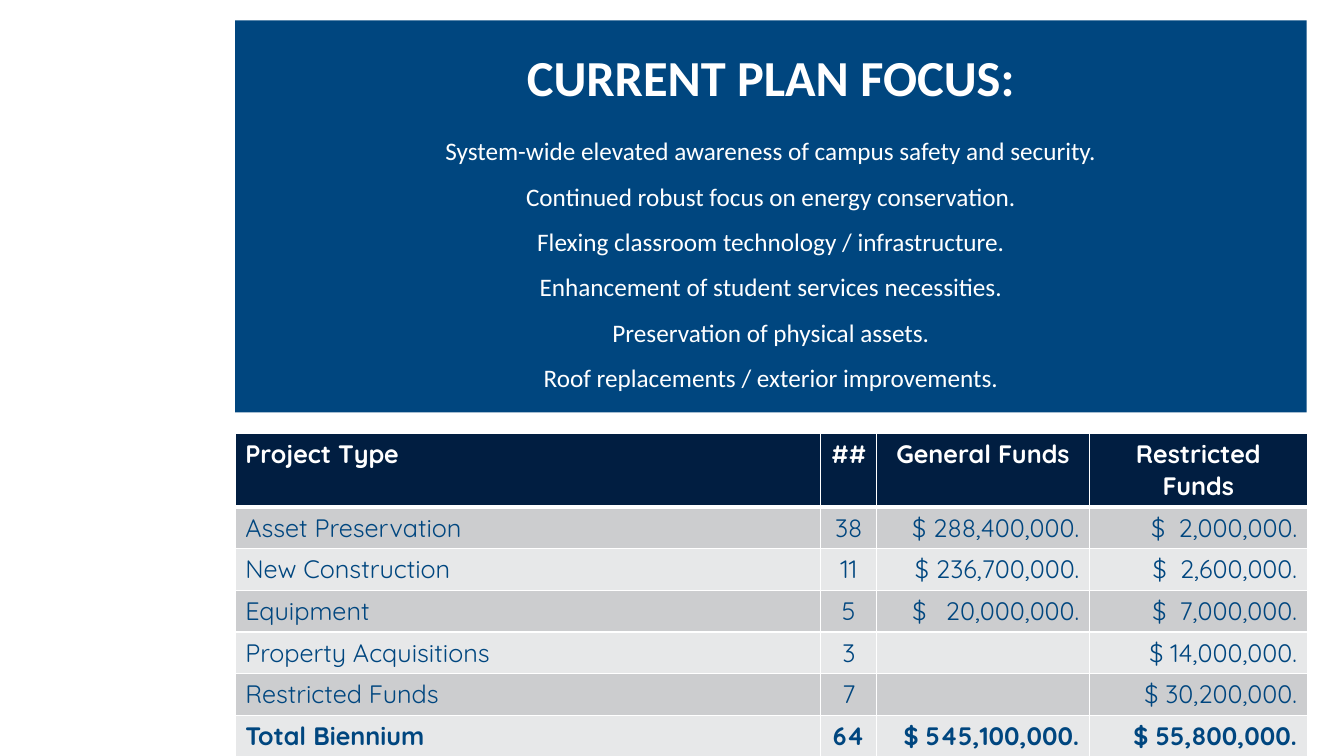
import pptx
import pptx.chart.data
import pptx.dml.color
import pptx.enum.shapes
import pptx.enum.text
import pptx.oxml
import pptx.oxml.ns
import pptx.util

ALIGN = pptx.enum.text.PP_ALIGN
COLORS = {"white": "FFFFFF", "blue": "00467F", "navy": "011E41",
          "dark_band": "CCCDCF", "light_band": "E7E8E9"}

# The slide is a grid of 100 columns by 100 rows
SLIDE_WIDTH = pptx.util.Inches(13.33)
SLIDE_HEIGHT = pptx.util.Inches(7.5)
LEFT, WIDTH = 17.5, 79.72
PANEL_TOP, PANEL_HEIGHT = 2.7, 51.85
TABLE_TOP, HEADER_HEIGHT, ROW_HEIGHT = 57.35, 9.45, 5.51
TABLE_COLUMNS = [43.58, 4.15, 15.83, 16.2]
COLUMN_ALIGNS = [ALIGN.LEFT, ALIGN.CENTER, ALIGN.RIGHT, ALIGN.RIGHT]

HEADING = "CURRENT PLAN FOCUS:"
FOCUS_LINES = [
    "System-wide elevated awareness of campus safety and security.",
    "Continued robust focus on energy conservation.",
    "Flexing classroom technology / infrastructure.",
    "Enhancement of student services necessities.",
    "Preservation of physical assets.",
    "Roof replacements / exterior improvements.",
]
FUND_ROWS = [
    ["Project Type", "##", "General Funds", "Restricted Funds"],
    ["Asset Preservation", "38", "$ 288,400,000.", "$ 2,000,000."],
    ["New Construction", "11", "$ 236,700,000.", "$ 2,600,000."],
    ["Equipment", "5", "$ 20,000,000.", "$ 7,000,000."],
    ["Property Acquisitions", "3", "", "$ 14,000,000."],
    ["Restricted Funds", "7", "", "$ 30,200,000."],
    ["Total Biennium", "64", "$ 545,100,000.", "$ 55,800,000."],
]
# Letter spacing, in points, that widens the gap after the dollar sign
DOLLAR_SPACING = {"$ 2,000,000.": 2.2, "$ 2,600,000.": 2.2,
                  "$ 7,000,000.": 2.2, "$ 20,000,000.": 4.4}


def across(columns):
    return round(SLIDE_WIDTH * columns / 100)


def down(rows):
    return round(SLIDE_HEIGHT * rows / 100)


def color(name):
    return pptx.dml.color.RGBColor.from_string(COLORS[name])


def style(para, name, size, color_name, bold, align):
    para.alignment = align
    para.font.name = name
    para.font.size = pptx.util.Pt(size)
    para.font.bold = bold
    para.font.color.rgb = color(color_name)


def add_panel(page):
    panel = page.shapes.add_shape(
        pptx.enum.shapes.MSO_SHAPE.RECTANGLE, across(LEFT), down(PANEL_TOP),
        across(WIDTH), down(PANEL_HEIGHT))
    panel.shadow.inherit = False
    panel.fill.solid()
    panel.fill.fore_color.rgb = color("blue")
    panel.line.fill.background()
    frame = panel.text_frame
    frame.word_wrap = True
    frame.vertical_anchor = pptx.enum.text.MSO_ANCHOR.MIDDLE

    heading = frame.paragraphs[0]
    heading.text = HEADING
    heading.line_spacing = 1.1
    style(heading, "Calibri", 36, "white", True, ALIGN.CENTER)

    focus = frame.add_paragraph()
    focus.text = "\v".join(FOCUS_LINES)
    focus.line_spacing = 1.5
    focus.space_before = pptx.util.Pt(10)
    style(focus, "Calibri", 18, "white", False, ALIGN.CENTER)


def add_border(cell, side, points):
    namespace = pptx.oxml.ns.nsdecls("a")
    cell._tc.get_or_add_tcPr().append(pptx.oxml.parse_xml(
        f'<a:ln{side} {namespace} w="{pptx.util.Pt(points)}"><a:solidFill>'
        f'<a:srgbClr val="{COLORS["white"]}"/></a:solidFill></a:ln{side}>'))


def write_amount(para, text):
    sign, amount = text[:2], text[2:]
    span = para.add_run()
    span.text = sign
    span._r.get_or_add_rPr().set("spc", str(round(DOLLAR_SPACING[text] * 100)))
    para.add_run().text = amount


def fill_cell(cell, text, row, column):
    header, total = row == 0, row == len(FUND_ROWS) - 1
    # Borders come before the fill in the cell properties
    for side, points in (("L", 1), ("R", 1), ("T", 3 if row == 1 else 1),
                         ("B", 3 if header else 1)):
        add_border(cell, side, points)
    band = "dark_band" if row % 2 else "light_band"
    cell.fill.solid()
    cell.fill.fore_color.rgb = color("navy" if header else band)

    para = cell.text_frame.paragraphs[0]
    if text in DOLLAR_SPACING:
        write_amount(para, text)
    elif text:
        para.text = text
    align = COLUMN_ALIGNS[column]
    if header and column:
        align = ALIGN.CENTER
    style(para, "Quicksand", 18, "white" if header else "blue",
          header or total, align)


def add_fund_table(page):
    heights = [HEADER_HEIGHT] + [ROW_HEIGHT] * (len(FUND_ROWS) - 1)
    table = page.shapes.add_table(
        len(FUND_ROWS), len(TABLE_COLUMNS), across(LEFT), down(TABLE_TOP),
        across(WIDTH), down(sum(heights))).table
    for column, width in zip(table.columns, TABLE_COLUMNS):
        column.width = across(width)
    for row, height in zip(table.rows, heights):
        row.height = down(height)
    for row, texts in enumerate(FUND_ROWS):
        for column, text in enumerate(texts):
            fill_cell(table.cell(row, column), text, row, column)


def main():
    deck = pptx.Presentation()
    deck.slide_width = SLIDE_WIDTH
    deck.slide_height = SLIDE_HEIGHT
    page = deck.slides.add_slide(deck.slide_layouts[6])
    add_panel(page)
    add_fund_table(page)
    deck.save("out.pptx")


if __name__ == "__main__":
    main()
